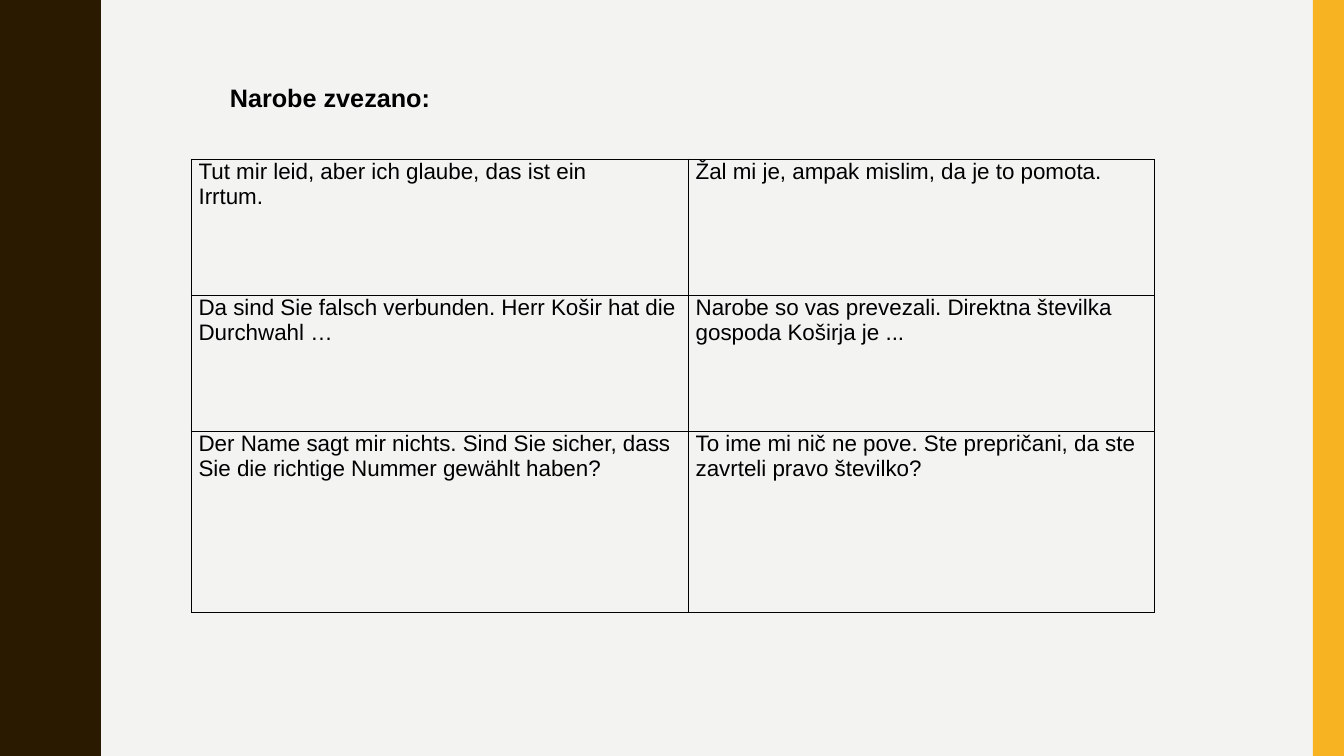
from lxml import etree
from pptx import Presentation
from pptx.dml.color import RGBColor
from pptx.enum.shapes import MSO_SHAPE
from pptx.enum.text import MSO_ANCHOR, MSO_AUTO_SIZE, PP_ALIGN
from pptx.oxml.ns import qn
from pptx.util import Inches, Pt

PAPER = RGBColor(0xF3, 0xF3, 0xF2)
BROWN = RGBColor(0x2A, 0x1A, 0x00)
GOLD = RGBColor(0xF8, 0xB3, 0x23)
BLACK = RGBColor(0, 0, 0)
RECT = MSO_SHAPE.RECTANGLE
TOP = MSO_ANCHOR.TOP
MIDDLE = MSO_ANCHOR.MIDDLE
FIXED = MSO_AUTO_SIZE.NONE
JUSTIFY = PP_ALIGN.JUSTIFY


def write(frame, text, size=16, bold=False):
    frame.text = text
    for para in frame.paragraphs:
        para.alignment = JUSTIFY
        para.line_spacing = 1.0
        para.space_before = Pt(0)
        para.font.name = "Arial"
        para.font.size = Pt(size)
        para.font.bold = bold
        para.font.color.rgb = BLACK


deck = Presentation()
deck.slide_width = Inches(13.33)
deck.slide_height = Inches(7.5)
slide = deck.slides.add_slide(deck.slide_layouts[5])
slide.background.fill.solid()
slide.background.fill.fore_color.rgb = PAPER
shapes = slide.shapes

PERIOD = 1.5
rise = [(0.78, 0), (0.78, 0.07), (0.79, 0.14), (0.8, 0.2), (0.81, 0.25),
        (0.83, 0.29), (0.85, 0.33), (0.87, 0.38), (0.89, 0.42), (0.91, 0.46),
        (0.93, 0.5), (0.95, 0.55), (0.96, 0.61), (0.97, 0.68), (0.97, 0.75)]
crest = rise + [(x, PERIOD - y) for x, y in rise[-2::-1]]
edge = [(x, y + PERIOD * turn) for turn in range(5) for x, y in crest]
pen = shapes.build_freeform(0, 0, scale=Inches(1))
pen.add_line_segments(edge + [(0, 7.5)], close=True)
wave = pen.convert_to_shape()
band = shapes.add_shape(RECT, Inches(13.02), 0, Inches(0.31), Inches(7.5))
for shape, color in ((wave, BROWN), (band, GOLD)):
    shape.shadow.inherit = False
    shape.fill.solid()
    shape.fill.fore_color.rgb = color
    shape.line.fill.background()

phrases = [
    ("Tut mir leid, aber ich glaube, das ist ein\nIrrtum.",
     "Žal mi je, ampak mislim, da je to pomota."),
    ("Da sind Sie falsch verbunden. Herr Košir hat die\nDurchwahl …",
     "Narobe so vas prevezali. Direktna številka\ngospoda Koširja je ..."),
    ("Der Name sagt mir nichts. Sind Sie sicher, dass\n"
     "Sie die richtige Nummer gewählt haben?",
     "To ime mi nič ne pove. Ste prepričani, da ste\nzavrteli pravo številko?"),
]
table = shapes.add_table(3, 2, Inches(1.9), Inches(1.58),
                         Inches(9.55), Inches(4.5)).table
table.first_row = False
table.horz_banding = False
for column, width in zip(table.columns, (4.93, 4.62)):
    column.width = Inches(width)
for row, height, pair in zip(table.rows, (1.35, 1.35, 1.8), phrases):
    row.height = Inches(height)
    for cell, phrase in zip(row.cells, pair):
        cell.margin_left = cell.margin_right = Inches(0.07)
        cell.margin_top = cell.margin_bottom = 0
        cell.vertical_anchor = TOP
        write(cell.text_frame, phrase)
        props = cell._tc.get_or_add_tcPr()
        for side in ("a:lnL", "a:lnR", "a:lnT", "a:lnB"):
            line = etree.SubElement(props, qn(side), w=str(Pt(1)))
            fill = etree.SubElement(line, qn("a:solidFill"))
            etree.SubElement(fill, qn("a:srgbClr"), val=str(BLACK))
        cell.fill.background()

title = shapes.title
title.left, title.top = Inches(2.18), Inches(0.77)
title.width, title.height = Inches(2.72), Inches(0.4)
title.text_frame.auto_size = FIXED
title.text_frame.vertical_anchor = MIDDLE
write(title.text_frame, "Narobe zvezano:", size=18, bold=True)

deck.save("out.pptx")
